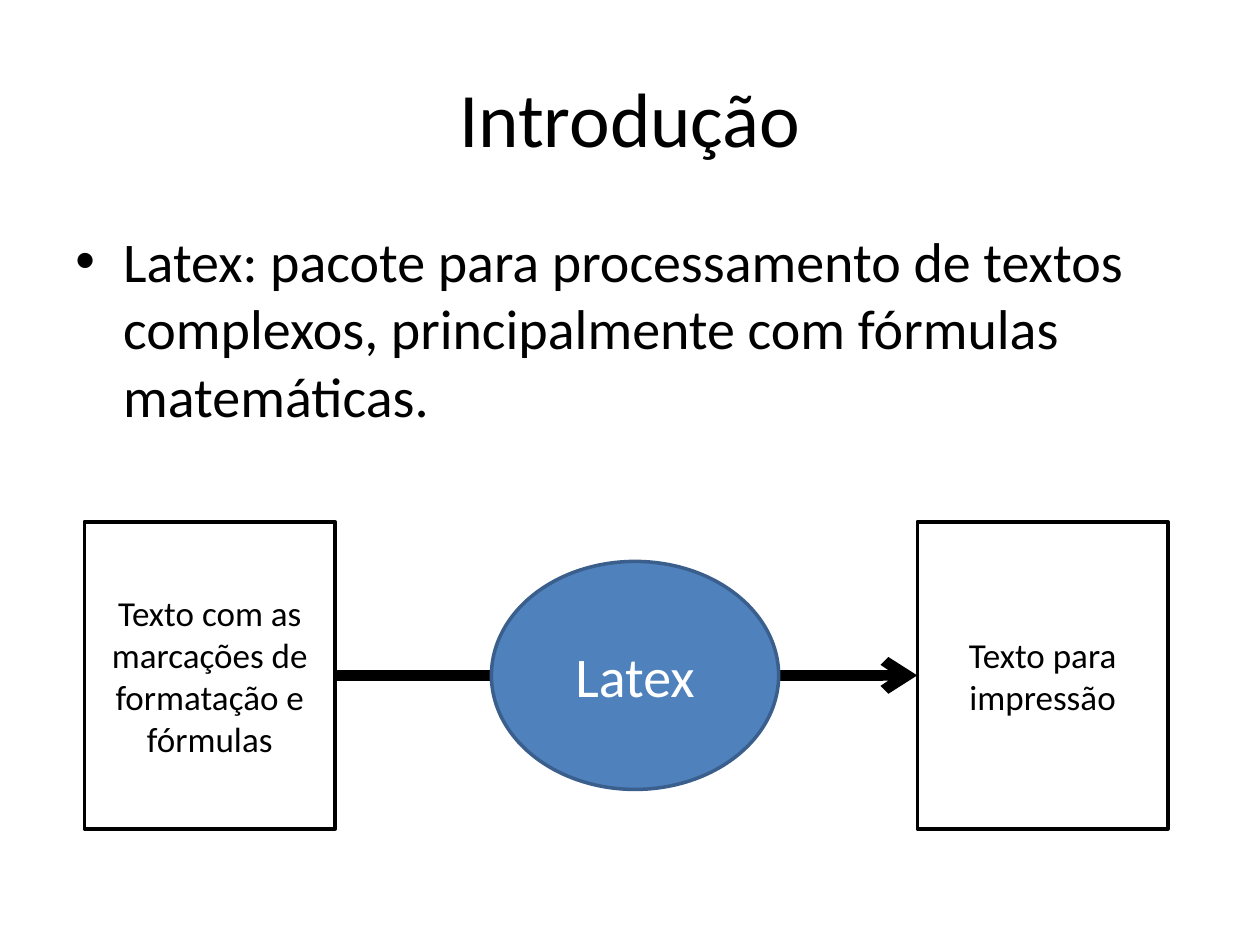
from lxml.etree import SubElement
from pptx import Presentation
from pptx.dml.color import RGBColor
from pptx.enum.shapes import MSO_CONNECTOR, MSO_SHAPE
from pptx.enum.text import MSO_ANCHOR, PP_ALIGN
from pptx.oxml.ns import qn
from pptx.util import Inches, Pt

SLIDE_WIDTH, SLIDE_HEIGHT = Inches(10), Inches(7.5)
FONT = "Calibri"
BLACK, WHITE, BLUE, DARK_BLUE = "000000", "FFFFFF", "4F81BD", "3A5F8C"
FLOW_AXIS = 71.47
BOX_WIDTH, BOX_HEIGHT = 19.9, 32.5
INPUT_LEFT, OUTPUT_LEFT = 6.7, 72.8


def color(value):
    """Turn a hex string into a colour."""
    return RGBColor.from_string(value)


def across(percent):
    """Turn a percentage of the slide width into a length."""
    return round(SLIDE_WIDTH * percent / 100)


def down(percent):
    """Turn a percentage of the slide height into a length."""
    return round(SLIDE_HEIGHT * percent / 100)


def write(shape, text, size, font_color=BLACK, align=PP_ALIGN.CENTER, anchor=MSO_ANCHOR.MIDDLE):
    """Write one formatted paragraph into a shape."""
    frame = shape.text_frame
    frame.word_wrap = True
    frame.vertical_anchor = anchor
    paragraph = frame.paragraphs[0]
    paragraph.text = text
    paragraph.alignment = align
    paragraph.font.name = FONT
    paragraph.font.size = Pt(size)
    paragraph.font.color.rgb = color(font_color)
    return paragraph


def add_title(slide, text):
    """Place and fill the title placeholder."""
    title = slide.shapes.title
    title.left, title.top = across(5), down(4)
    title.width, title.height = across(90), down(16.67)
    write(title, text, 44)


def add_bullet_text(slide, text):
    """Add a text box holding one bulleted paragraph."""
    box = slide.shapes.add_textbox(across(5), down(23.33), across(90), down(66))
    paragraph = write(box, text, 32, align=PP_ALIGN.LEFT, anchor=MSO_ANCHOR.TOP)
    paragraph.space_before = Pt(6.4)
    properties = paragraph._p.get_or_add_pPr()
    indent = Inches(0.38)
    properties.set("marL", str(indent))
    properties.set("indent", str(-indent))
    bullet_font = SubElement(properties, qn("a:buFont"))
    bullet_font.set("typeface", "Arial")
    bullet = SubElement(properties, qn("a:buChar"))
    bullet.set("char", "•")


def add_flow_arrow(slide, start, end):
    """Add a thick arrow along the flow axis."""
    axis = down(FLOW_AXIS)
    arrow = slide.shapes.add_connector(MSO_CONNECTOR.STRAIGHT, across(start), axis, across(end), axis)
    arrow.line.color.rgb = color(BLACK)
    arrow.line.width = Pt(6)
    SubElement(arrow.line._get_or_add_ln(), qn("a:tailEnd")).set("type", "arrow")
    SubElement(arrow._element.spPr, qn("a:effectLst"))


def add_step(slide, kind, left, width, height, text, size, fill=WHITE, line=BLACK, font_color=BLACK):
    """Add a labelled shape centred on the flow axis."""
    top = FLOW_AXIS - height / 2
    step = slide.shapes.add_shape(kind, across(left), down(top), across(width), down(height))
    step.shadow.inherit = False
    step.fill.solid()
    step.fill.fore_color.rgb = color(fill)
    step.line.color.rgb = color(line)
    step.line.width = Pt(2)
    write(step, text, size, font_color)


def main():
    """Build and save the slide."""
    presentation = Presentation()
    presentation.slide_width, presentation.slide_height = SLIDE_WIDTH, SLIDE_HEIGHT
    slide = presentation.slides.add_slide(presentation.slide_layouts[5])
    add_title(slide, "Introdução")
    add_bullet_text(
        slide,
        "Latex: pacote para processamento de textos complexos, "
        "principalmente com fórmulas matemáticas.",
    )
    add_flow_arrow(slide, INPUT_LEFT + BOX_WIDTH, OUTPUT_LEFT)
    for left, text in (
        (INPUT_LEFT, "Texto com as marcações de formatação e fórmulas"),
        (OUTPUT_LEFT, "Texto para impressão"),
    ):
        add_step(slide, MSO_SHAPE.RECTANGLE, left, BOX_WIDTH, BOX_HEIGHT, text, 20)
    add_step(slide, MSO_SHAPE.OVAL, 39, 22.8, 24.13, "Latex", 32, BLUE, DARK_BLUE, WHITE)
    presentation.save("out.pptx")


if __name__ == "__main__":
    main()
